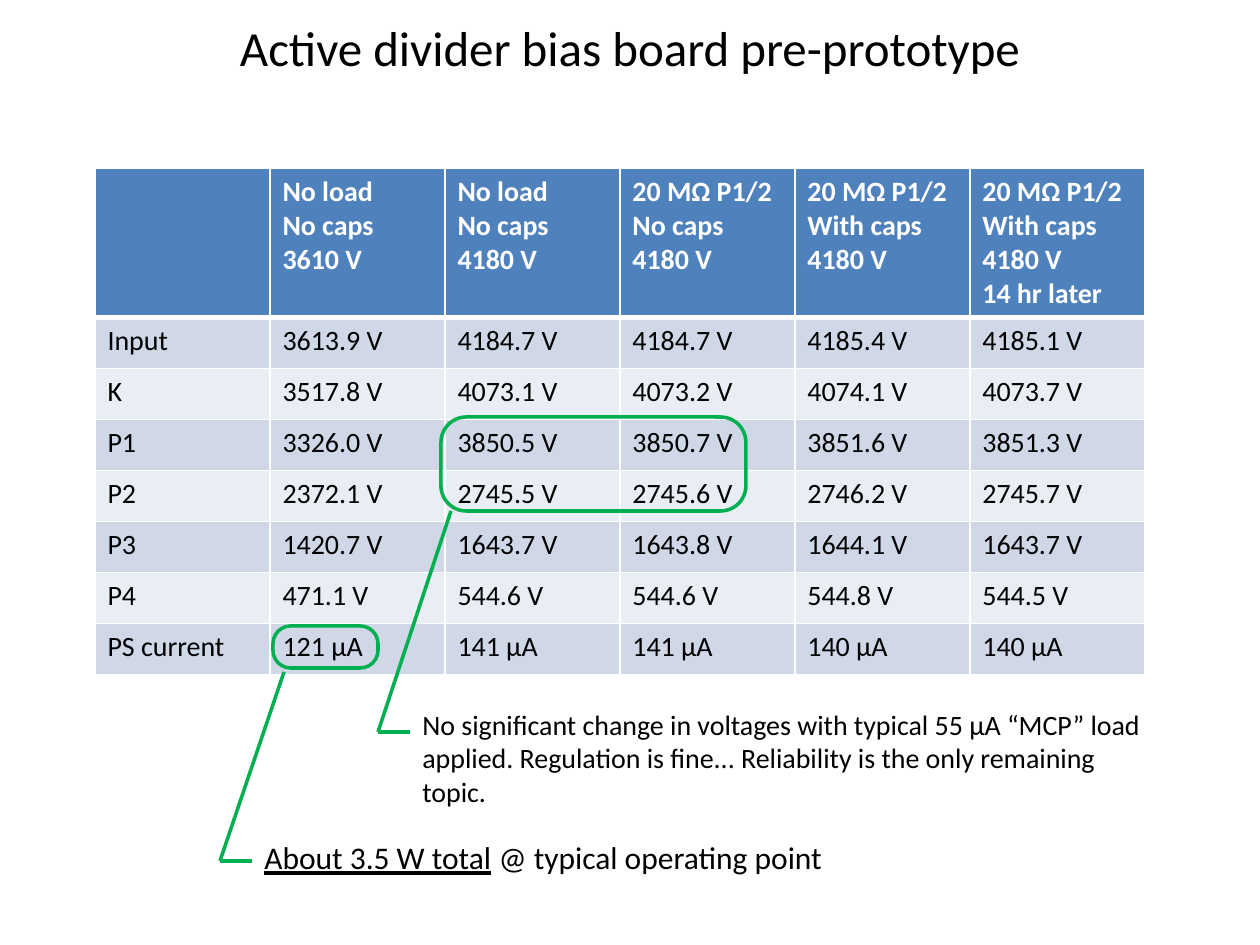
from collections import namedtuple
from dataclasses import dataclass

from lxml import etree
from pptx import Presentation
from pptx import util as u
from pptx.dml.color import RGBColor
from pptx.enum import shapes, text
from pptx.oxml import ns

Box = namedtuple("Box", "left top width height")


@dataclass(frozen=True)
class Theme:
    font: str = "Calibri"
    ink: str = "000000"
    white: str = "FFFFFF"
    header: str = "4F81BD"
    bands: tuple = ("D0D8E8", "E9EDF4")
    accent: str = "00B050"
    title_size: int = 28
    body_size: int = 16
    summary_size: int = 18
    rule: int = 1
    header_rule: int = 3
    accent_line: int = 2


THEME = Theme()
PX_PER_INCH = 126
HEADER_HEIGHT = 148

HEADERS = [
    "",
    "No load\nNo caps\n3610 V",
    "No load\nNo caps\n4180 V",
    "20 MΩ P1/2\nNo caps\n4180 V",
    "20 MΩ P1/2\nWith caps\n4180 V",
    "20 MΩ P1/2\nWith caps\n4180 V\n14 hr later",
]
READINGS = [
    ("Input", "V", "3613.9 4184.7 4184.7 4185.4 4185.1"),
    ("K", "V", "3517.8 4073.1 4073.2 4074.1 4073.7"),
    ("P1", "V", "3326.0 3850.5 3850.7 3851.6 3851.3"),
    ("P2", "V", "2372.1 2745.5 2745.6 2746.2 2745.7"),
    ("P3", "V", "1420.7 1643.7 1643.8 1644.1 1643.7"),
    ("P4", "V", "471.1 544.6 544.6 544.8 544.5"),
    ("PS current", "μA", "121 141 141 140 140"),
]
REGULATION_NOTE = [(
    "No significant change in voltages with typical 55 μA “MCP” load applied. "
    "Regulation is fine... Reliability is the only remaining topic.", False)]
POWER_NOTE = [("About 3.5 W total", True), (" @ typical operating point", False)]


def px(length):
    return u.Emu(round(length * 914400 / PX_PER_INCH))


def place(box):
    return [px(length) for length in box]


def style_font(para, size, color=THEME.ink, bold=False):
    para.font.name = THEME.font
    para.font.size = u.Pt(size)
    para.font.bold = bold
    para.font.color.rgb = RGBColor.from_string(color)


def add_title(page, box):
    title = page.shapes.title
    title.left, title.top, title.width, title.height = place(box)
    frame = title.text_frame
    frame.text = "Active divider bias board pre-prototype"
    frame.vertical_anchor = text.MSO_ANCHOR.MIDDLE
    para = frame.paragraphs[0]
    para.alignment = text.PP_ALIGN.CENTER
    style_font(para, THEME.title_size)


def add_borders(cell, bottom, top):
    properties = cell._tc.get_or_add_tcPr()
    widths = {"lnL": THEME.rule, "lnR": THEME.rule, "lnT": top, "lnB": bottom}
    for side, width in widths.items():
        line = etree.SubElement(properties, ns.qn(f"a:{side}"), w=str(u.Pt(width)))
        fill = etree.SubElement(line, ns.qn("a:solidFill"))
        etree.SubElement(fill, ns.qn("a:srgbClr"), val=THEME.white)


def add_readings_table(page, box):
    rows = [HEADERS] + [
        [label] + [f"{value} {unit}" for value in values.split()]
        for label, unit, values in READINGS]
    table = page.shapes.add_table(len(rows), len(HEADERS), *place(box)).table
    for column in table.columns:
        column.width = px(box.width / len(HEADERS))
    for index, row in enumerate(rows):
        is_header = index == 0
        height = HEADER_HEIGHT if is_header else (box.height - HEADER_HEIGHT) / len(READINGS)
        table.rows[index].height = px(height)
        fill = THEME.header if is_header else THEME.bands[(index - 1) % 2]
        bottom = THEME.header_rule if is_header else THEME.rule
        top = THEME.header_rule if index == 1 else THEME.rule
        for cell, content in zip(table.rows[index].cells, row):
            add_borders(cell, bottom, top)
            cell.fill.solid()
            cell.fill.fore_color.rgb = RGBColor.from_string(fill)
            cell.text = content
            for para in cell.text_frame.paragraphs:
                style_font(para, THEME.body_size,
                           THEME.white if is_header else THEME.ink, is_header)


def style_line(line):
    line.color.rgb = RGBColor.from_string(THEME.accent)
    line.width = u.Pt(THEME.accent_line)


def add_highlight(page, box, rounding):
    outline = page.shapes.add_shape(shapes.MSO_SHAPE.ROUNDED_RECTANGLE, *place(box))
    outline.adjustments[0] = rounding
    outline.fill.background()
    outline.shadow.inherit = False
    style_line(outline.line)


def add_leader(page, points):
    for start, end in zip(points, points[1:]):
        connector = page.shapes.add_connector(
            shapes.MSO_CONNECTOR.STRAIGHT, *place(start + end))
        style_line(connector.line)
        etree.SubElement(connector._element.spPr, ns.qn("a:effectLst"))


def add_note(page, box, spans, size, wrap):
    frame = page.shapes.add_textbox(*place(box)).text_frame
    frame.word_wrap = wrap
    frame.auto_size = text.MSO_AUTO_SIZE.SHAPE_TO_FIT_TEXT
    para = frame.paragraphs[0]
    style_font(para, size)
    for content, underlined in spans:
        span = para.add_run()
        span.text = content
        span.font.underline = underlined


def add_callout(page, highlight, rounding, leader, note, spans, size, wrap):
    add_highlight(page, highlight, rounding)
    add_leader(page, leader)
    add_note(page, note, spans, size, wrap)


def main():
    deck = Presentation()
    deck.slide_width, deck.slide_height = px(1260), px(945)
    page = deck.slides.add_slide(deck.slide_layouts[5])
    add_title(page, Box(0, 10, 1260, 74))
    add_readings_table(page, Box(95, 168, 1050, 505))
    add_callout(page, Box(441, 417, 305, 94), 0.27,
                [(451, 511), (378, 732), (410, 732)],
                Box(410, 701, 746, 115), REGULATION_NOTE, THEME.body_size, True)
    add_callout(page, Box(273, 626, 105, 42), 0.42,
                [(284, 672), (220, 861), (252, 861)],
                Box(252, 832, 590, 50), POWER_NOTE, THEME.summary_size, False)
    deck.save("out.pptx")


if __name__ == "__main__":
    main()
